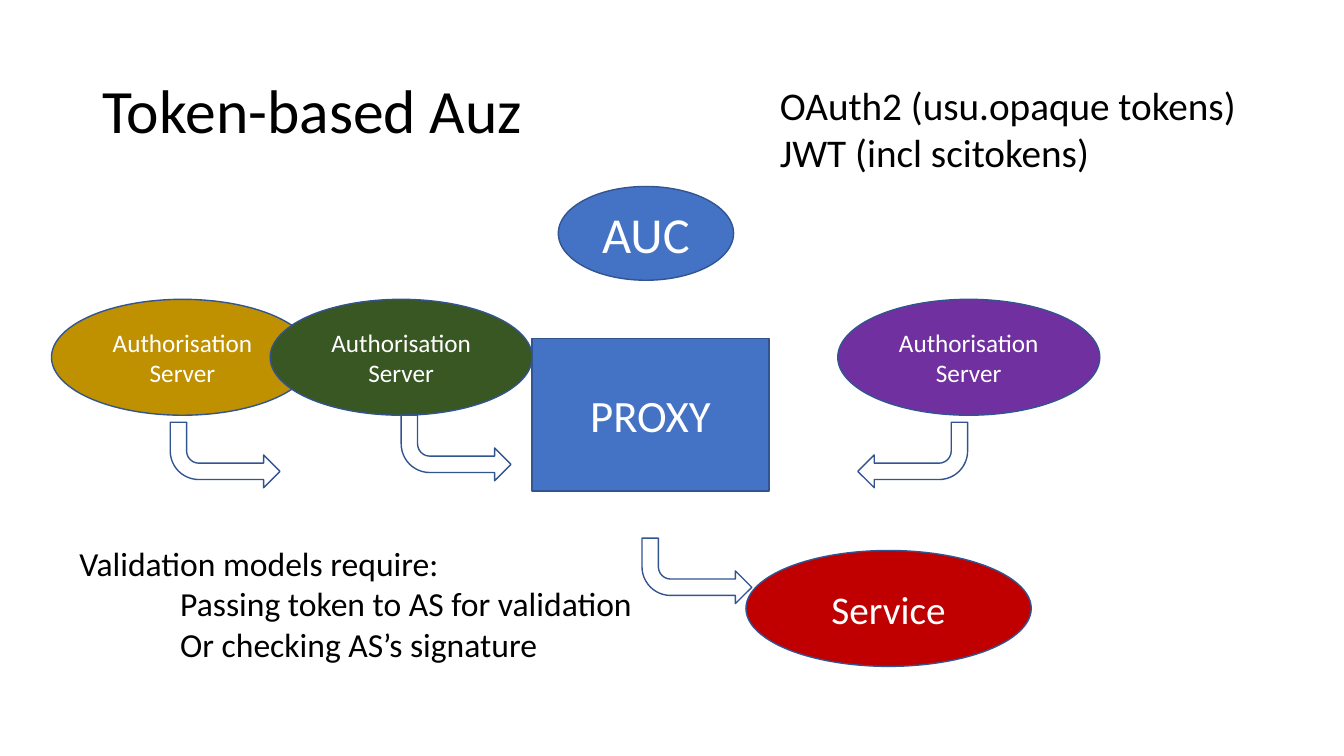
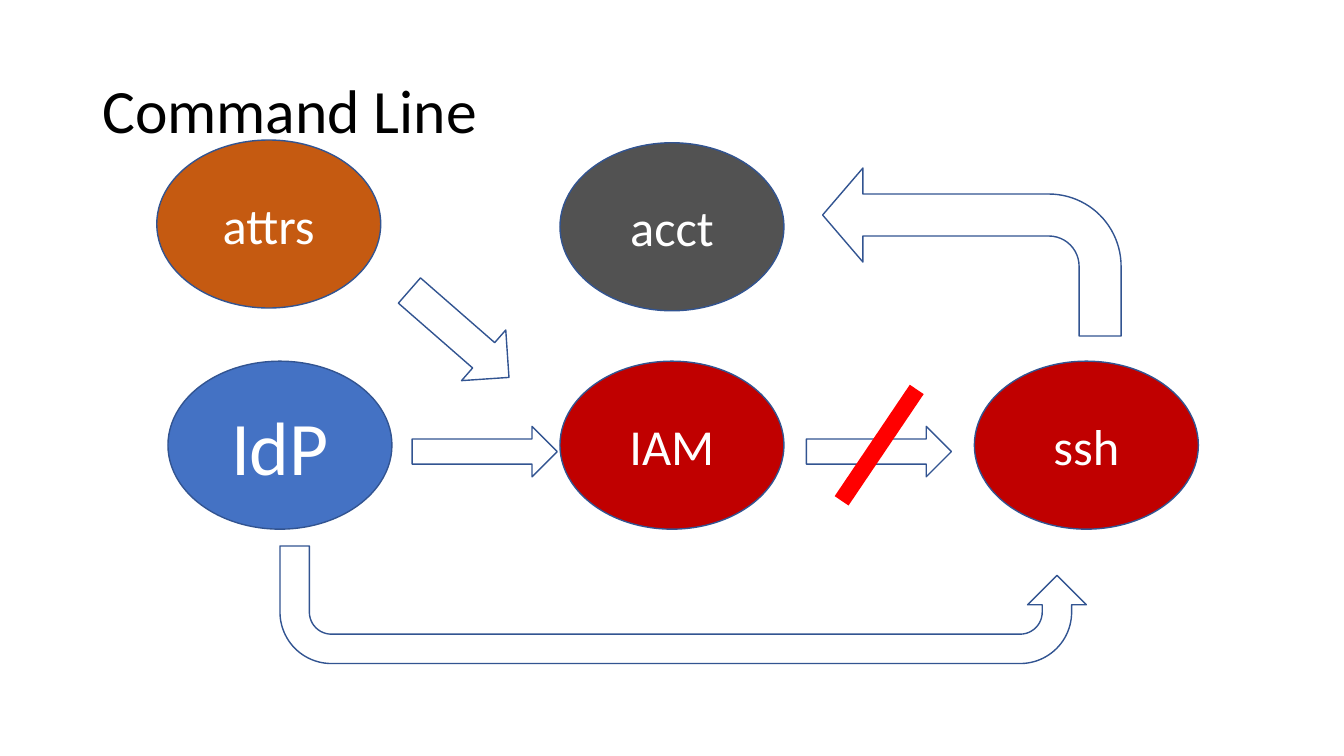
from pptx import Presentation
from pptx.dml.color import RGBColor
from pptx.enum.shapes import MSO_SHAPE
from pptx.enum.text import MSO_ANCHOR, PP_ALIGN
from pptx.util import Inches, Pt

BLUE, RED, WHITE, EDGE = "4472C4", "C00000", "FFFFFF", "325491"

deck = Presentation()
deck.slide_width, deck.slide_height = Inches(13.333), Inches(7.5)
CELL = deck.slide_width / 48  # square grid: 48 columns, 27 rows


def write(frame, lines, size, color="000000", align=PP_ALIGN.LEFT):
    """Fill a text frame; each line is a pair of text and indent in inches."""
    frame.vertical_anchor = MSO_ANCHOR.MIDDLE
    for i, (text, indent) in enumerate(lines):
        para = frame.add_paragraph() if i else frame.paragraphs[0]
        para.alignment = align
        if indent:
            para._p.get_or_add_pPr().set("marL", str(Inches(indent)))
        run = para.add_run()
        run.text = text
        run.font.name, run.font.size = "Calibri", Pt(size)
        run.font.color.rgb = RGBColor.from_string(color)


def draw(slide, kind, box, fill=WHITE, text="", size=36, flip="", turn=0, edge=EDGE):
    """Add a preset shape; box is in grid cells, flip holds H and/or V."""
    shape = slide.shapes.add_shape(kind, *[round(n * CELL) for n in box])
    shape.shadow.inherit = False
    shape.rotation = turn
    shape.fill.solid()
    shape.fill.fore_color.rgb = RGBColor.from_string(fill)
    if edge:
        shape.line.color.rgb = RGBColor.from_string(edge)
        shape.line.width = Pt(1)
    else:
        shape.line.fill.background()
    for axis in flip:
        shape.element.spPr.xfrm.set("flip" + axis, "1")
    if text:
        write(shape.text_frame, [(text, 0)], size, WHITE, PP_ALIGN.CENTER)
    return shape


# Titles
pages = []
for title in ("Token-based Auz", "Command Line"):
    page = deck.slides.add_slide(deck.slide_layouts[6])
    box = page.shapes.add_textbox(*[round(n * CELL) for n in (3.3, 1.44, 41.4, 5.22)])
    box.text_frame.word_wrap = True
    write(box.text_frame, [(title, 0)], 44)
    box.text_frame.paragraphs[0].line_spacing = 0.9
    pages.append(page)
token, shell = pages

# Token-based authorisation
OVAL, BENT, RIGHT = MSO_SHAPE.OVAL, MSO_SHAPE.BENT_ARROW, MSO_SHAPE.RIGHT_ARROW
draw(token, OVAL, (19.94, 6.66, 6.26, 3.35), BLUE, "AUC")
draw(token, MSO_SHAPE.RECTANGLE, (19, 12.1, 8.46, 5.44), BLUE, "PROXY", 32)
for left, fill in ((1.84, "BF9000"), (9.65, "385723"), (29.92, "7030A0")):
    draw(token, OVAL, (left, 10.69, 9.36, 4.14), fill, "Authorisation Server", 18)
draw(token, OVAL, (26.64, 19.66, 10.19, 4.14), RED, "Service", 28)
for left, top, flip in (
    (14.33, 14.83, "V"),
    (6.08, 15.08, "V"),
    (30.64, 15.08, "HV"),
    (22.93, 19.22, "V"),
):
    draw(token, BENT, (left, top, 3.92, 2.34), flip=flip)

notes = (
    ((2.48, 19.19, 20.63, 4.72), 24, [
        ("Validation models require:", 0),
        ("Passing token to AS for validation", 1),
        ("Or checking AS’s signature", 1),
    ]),
    ((27.5, 2.7, 17.2, 3.74), 28, [
        ("OAuth2 (usu.opaque tokens)", 0),
        ("JWT (incl scitokens)", 0),
    ]),
)
for area, size, lines in notes:
    box = token.shapes.add_textbox(*[round(n * CELL) for n in area])
    box.text_frame.word_wrap = False
    write(box.text_frame, lines, size)

# Command line
for text, left, top, fill, size in (
    ("IdP", 6, 12.9, BLUE, 54),
    ("IAM", 20, 12.9, RED, 36),
    ("ssh", 34.8, 12.9, RED, 36),
    ("acct", 20, 5.1, "525252", 36),
    ("attrs", 5.6, 5, "C55A11", 36),
):
    draw(shell, OVAL, (left, top, 8, 6), fill, text, size)
draw(shell, MSO_SHAPE.U_TURN_ARROW, (10, 19.5, 28.8, 4.2), flip="V")
for left in (14.72, 28.8):
    draw(shell, RIGHT, (left, 15.23, 5.18, 1.8))
draw(shell, MSO_SHAPE.RECTANGLE, (31.1, 13.5, 0.6, 4.8), "FF0000", turn=34, edge="")
back = draw(shell, BENT, (29.38, 6, 10.66, 6), flip="H")
for i, share in enumerate((0.25, 0.28, 0.24, 0.43)):
    back.adjustments[i] = share
draw(shell, RIGHT, (14.04, 10.73, 4.72, 2.4), turn=41.1)

deck.save("out.pptx")
